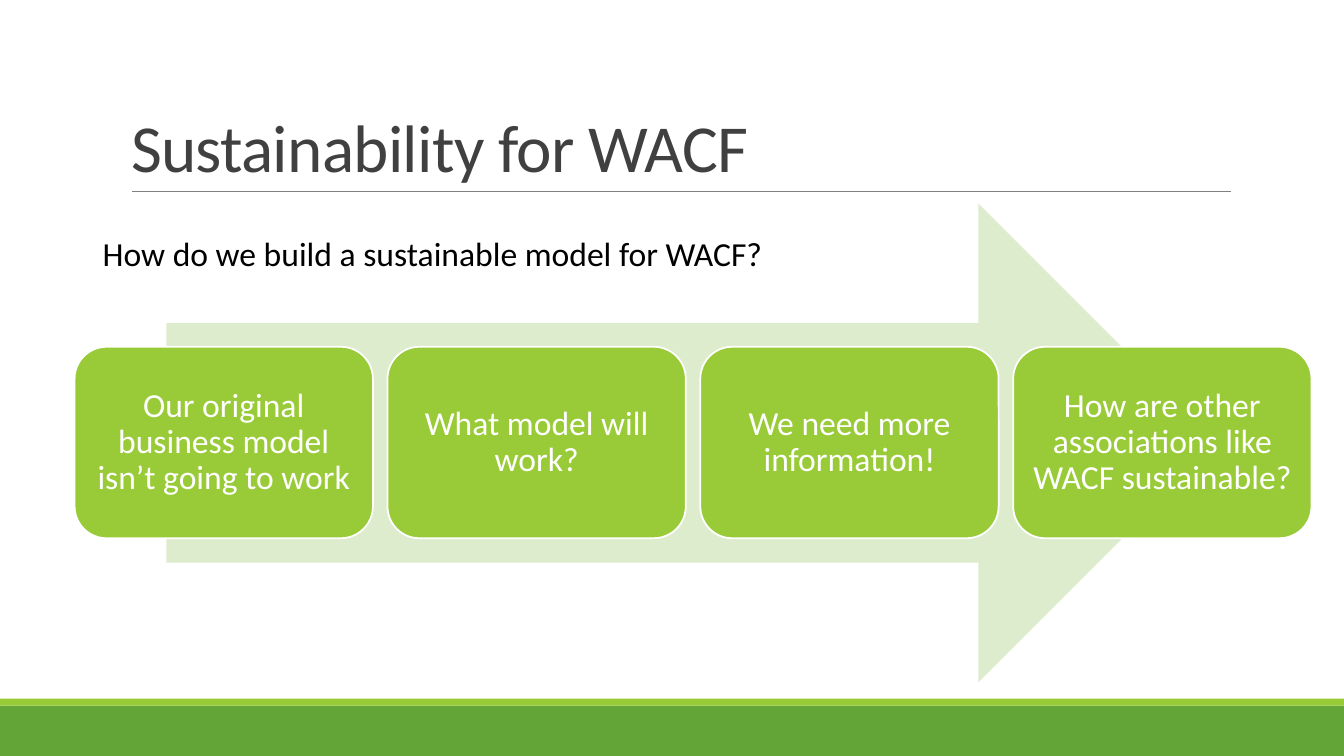
from dataclasses import dataclass

from lxml.etree import SubElement
from pptx import Presentation
from pptx.dml.color import RGBColor
from pptx.enum.shapes import MSO_CONNECTOR, MSO_SHAPE
from pptx.enum.text import MSO_ANCHOR, MSO_AUTO_SIZE, PP_ALIGN
from pptx.oxml.ns import qn
from pptx.shapes.autoshape import Shape
from pptx.slide import Slide
from pptx.text.text import TextFrame
from pptx.util import Inches, Pt

SLIDE_WIDTH, SLIDE_HEIGHT = Inches(13.333), Inches(7.5)
FONT = "Calibri"
COLOURS = {
    "green": "63A537",
    "lime": "99CB38",
    "pale": "DEECCE",
    "rule": "808080",
    "title": "404040",
    "black": "000000",
    "white": "FFFFFF",
}
STEPS = [
    "Our original business model isn’t going to work",
    "What model will work?",
    "We need more information!",
    "How are other associations like WACF sustainable?",
]


def across(percent: float) -> int:
    return round(SLIDE_WIDTH * percent / 100)


def down(percent: float) -> int:
    return round(SLIDE_HEIGHT * percent / 100)


def colour(name: str) -> RGBColor:
    return RGBColor.from_string(COLOURS[name])


@dataclass(frozen=True)
class Box:
    """A place on the slide, in percent of its width and height."""
    left: float
    top: float
    width: float
    height: float

    def lengths(self) -> tuple[int, int, int, int]:
        return across(self.left), down(self.top), across(self.width), down(self.height)


@dataclass(frozen=True)
class Block:
    kind: MSO_SHAPE
    box: Box
    fill: str
    outline: str | None = None
    text: str = ""


TITLE_BOX = Box(9, 4.13, 82.5, 21.2)
QUESTION_BOX = Box(6.9, 30.13, 55.35, 12.13)
FIRST_STEP = Box(5.55, 45.87, 22.2, 25.33)
STEP_PITCH = 23.28

BARS = [
    Block(MSO_SHAPE.RECTANGLE, Box(0, 93.33, 100, 6.67), "green"),
    Block(MSO_SHAPE.RECTANGLE, Box(0, 92.4, 100, 0.93), "lime"),
]
ARROW = Block(MSO_SHAPE.RIGHT_ARROW, Box(12.38, 26.93, 78.23, 63.33), "pale")
STEP_BLOCKS = [
    Block(
        MSO_SHAPE.ROUNDED_RECTANGLE,
        Box(FIRST_STEP.left + index * STEP_PITCH, FIRST_STEP.top,
            FIRST_STEP.width, FIRST_STEP.height),
        "lime", "white", text,
    )
    for index, text in enumerate(STEPS)
]


def set_all(target: object, values: dict[str, object]) -> None:
    for name, value in values.items():
        setattr(target, name, value)


def write(frame: TextFrame, text: str, size: float, ink: str,
          frame_format: dict[str, object], paragraph_format: dict[str, object]) -> None:
    set_all(frame, {"word_wrap": True, **frame_format})
    paragraph = frame.paragraphs[0]
    set_all(paragraph, paragraph_format)
    run = paragraph.add_run()
    run.text = text
    set_all(run.font, {"name": FONT, "size": Pt(size)})
    run.font.color.rgb = colour(ink)


def add_block(slide: Slide, block: Block) -> Shape:
    shape = slide.shapes.add_shape(block.kind, *block.box.lengths())
    shape.shadow.inherit = False
    shape.fill.solid()
    shape.fill.fore_color.rgb = colour(block.fill)
    if block.outline:
        shape.line.color.rgb = colour(block.outline)
        shape.line.width = Pt(1.25)
    else:
        shape.line.fill.background()
    if block.text:
        margins = {f"margin_{side}": Inches(0.1) for side in ("left", "top", "right", "bottom")}
        write(shape.text_frame, block.text, 24, "white",
              {"vertical_anchor": MSO_ANCHOR.MIDDLE, **margins},
              {"alignment": PP_ALIGN.CENTER, "line_spacing": 0.9})
    return shape


def add_rule(slide: Slide, left: float, right: float, top: float) -> None:
    rule = slide.shapes.add_connector(
        MSO_CONNECTOR.STRAIGHT, across(left), down(top), across(right), down(top))
    rule.line.color.rgb = colour("rule")
    rule.line.width = Pt(0.5)
    SubElement(rule._element.spPr, qn("a:effectLst"))


def add_title(slide: Slide, text: str) -> None:
    title = slide.shapes.title
    set_all(title, dict(zip(("left", "top", "width", "height"), TITLE_BOX.lengths())))
    write(title.text_frame, text, 48, "title",
          {"vertical_anchor": MSO_ANCHOR.BOTTOM, "auto_size": MSO_AUTO_SIZE.NONE},
          {"alignment": PP_ALIGN.LEFT, "line_spacing": 0.85})
    # Tighten the letters by half a point
    title.text_frame.paragraphs[0].runs[0]._r.get_or_add_rPr().set("spc", "-50")


def main() -> None:
    presentation = Presentation()
    set_all(presentation, {"slide_width": SLIDE_WIDTH, "slide_height": SLIDE_HEIGHT})
    slide = presentation.slides.add_slide(presentation.slide_layouts.get_by_name("Title Only"))

    # Footer bars, title and rule
    for bar in BARS:
        add_block(slide, bar)
    add_rule(slide, 9.83, 91.58, 25.3)
    add_title(slide, "Sustainability for WACF")

    # Arrow with the steps on it
    for block in [ARROW, *STEP_BLOCKS]:
        add_block(slide, block)

    # Leading question
    question = slide.shapes.add_textbox(*QUESTION_BOX.lengths())
    write(question.text_frame, "How do we build a sustainable model for WACF?", 24, "black",
          {"vertical_anchor": MSO_ANCHOR.TOP}, {"alignment": PP_ALIGN.LEFT})

    presentation.save("out.pptx")


if __name__ == "__main__":
    main()
